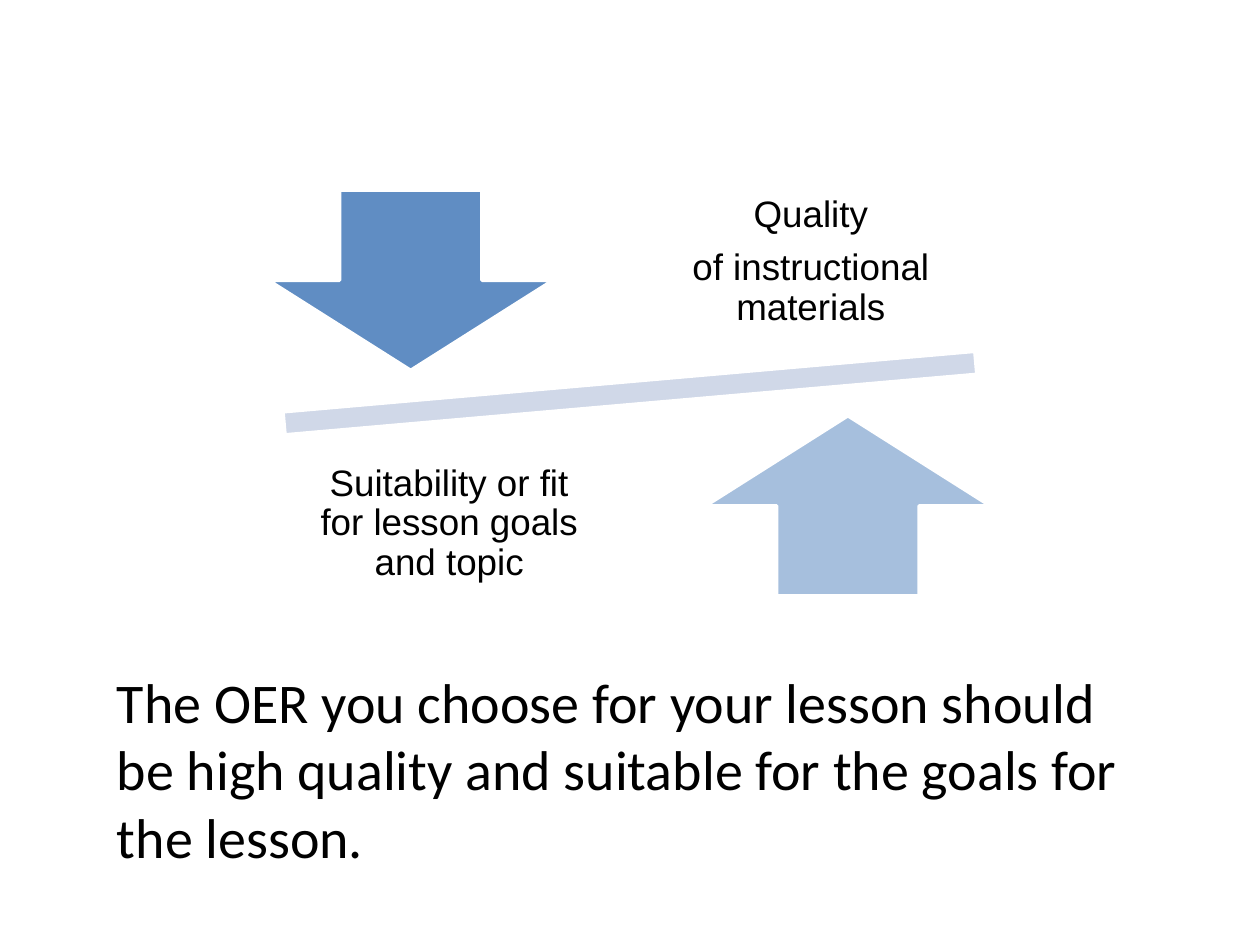
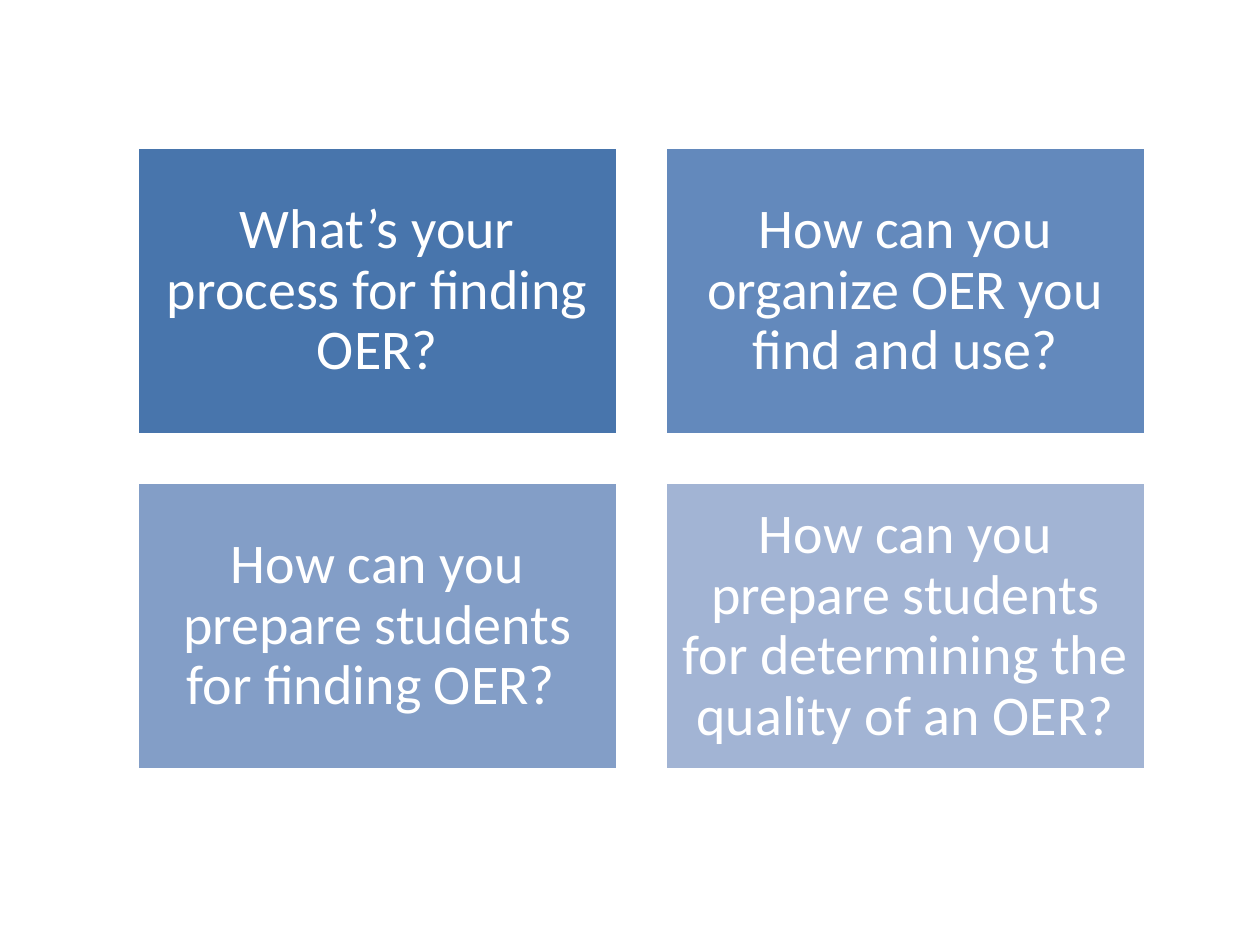
"""Build two slides on choosing, finding and organizing OER."""
from dataclasses import dataclass

from lxml import etree
from pptx import Presentation
from pptx.dml.color import RGBColor
from pptx.enum import shapes, text
from pptx.oxml import ns
from pptx.util import Inches, Pt


@dataclass(frozen=True)
class Theme:
    ink: str = "000000"
    paper: str = "FFFFFF"
    accent: str = "4F81BD"
    beam: str = "D0D8E8"
    cards: tuple = ("4875AC", "6389BC", "839EC7", "A2B4D4")
    body_font: str = "Calibri"
    label_font: str = "Arial"
    body_size: int = 32
    label_size: int = 21
    outline: int = 2
    tight_lines: float = 0.9
    paragraph_gap: float = 0.35


def write_text(frame, content, *, font, size, color, centered=False, inset=None,
               line_spacing=None, gap=0):
    frame.word_wrap = True
    if inset is not None:
        frame.margin_left = frame.margin_right = Inches(inset)
        frame.margin_top = frame.margin_bottom = Inches(inset)
    frame.vertical_anchor = text.MSO_ANCHOR.MIDDLE if centered else text.MSO_ANCHOR.TOP
    frame.text = content
    for paragraph in frame.paragraphs:
        paragraph.alignment = text.PP_ALIGN.CENTER if centered else text.PP_ALIGN.LEFT
        paragraph.line_spacing = line_spacing
        paragraph.space_after = Pt(size * gap)
        for run in paragraph.runs:
            run.font.name = font
            run.font.size = Pt(size)
            run.font.color.rgb = RGBColor.from_string(color)


class SlideBuilder:
    def __init__(self, presentation, theme):
        self.presentation = presentation
        self.theme = theme
        self.slide = None

    def new_slide(self):
        self.slide = self.presentation.slides.add_slide(self.presentation.slide_layouts[6])
        background = self.slide.background.fill
        background.solid()
        background.fore_color.rgb = RGBColor.from_string(self.theme.paper)

    def add_shape(self, kind, box, color, opacity=100, rotation=0):
        shape = self.slide.shapes.add_shape(kind, *map(Inches, box))
        shape.shadow.inherit = False
        shape.rotation = rotation
        shape.fill.solid()
        shape.fill.fore_color.rgb = RGBColor.from_string(color)
        shape.line.color.rgb = RGBColor.from_string(self.theme.paper)
        shape.line.width = Pt(self.theme.outline)
        if opacity < 100:
            fill_color = shape._element.spPr.find(ns.qn("a:solidFill"))[0]
            etree.SubElement(fill_color, ns.qn("a:alpha"), val=str(opacity * 1000))
        return shape

    def add_card(self, box, content, color):
        card = self.add_shape(shapes.MSO_SHAPE.RECTANGLE, box, color)
        write_text(card.text_frame, content, font=self.theme.body_font,
                   size=self.theme.body_size, color=self.theme.paper, centered=True,
                   inset=0.13, line_spacing=self.theme.tight_lines,
                   gap=self.theme.paragraph_gap)

    def add_label(self, box, content):
        label = self.slide.shapes.add_textbox(*map(Inches, box))
        write_text(label.text_frame, content, font=self.theme.label_font,
                   size=self.theme.label_size, color=self.theme.ink, centered=True,
                   inset=0.16, line_spacing=self.theme.tight_lines,
                   gap=self.theme.paragraph_gap)

    def add_statement(self, box, content):
        statement = self.slide.shapes.add_textbox(*map(Inches, box))
        write_text(statement.text_frame, content, font=self.theme.body_font,
                   size=self.theme.body_size, color=self.theme.ink)
        statement.text_frame.auto_size = text.MSO_AUTO_SIZE.SHAPE_TO_FIT_TEXT


def build_balance(builder):
    accent = builder.theme.accent
    arrow_size, label_size = (2.26, 1.43), (2.41, 1.5)
    builder.new_slide()
    builder.add_shape(shapes.MSO_SHAPE.MATH_MINUS, (1.25, 2.73, 7.5, 0.78),
                      builder.theme.beam, rotation=355)
    builder.add_shape(shapes.MSO_SHAPE.DOWN_ARROW, (2.13, 1.51, *arrow_size), accent, 90)
    builder.add_label((5.23, 1.33, *label_size), "Quality\nof instructional materials")
    builder.add_shape(shapes.MSO_SHAPE.UP_ARROW, (5.6, 3.3, *arrow_size), accent, 50)
    builder.add_label((2.36, 3.41, *label_size),
                      "Suitability or fit for lesson goals and topic")
    builder.add_statement((0.83, 5.25, 8.33, 1.72),
                          "The OER you choose for your lesson should be high quality "
                          "and suitable for the goals for the lesson.")


def build_questions(builder):
    questions = (
        "What’s your process for finding OER?",
        "How can you organize OER you find and use?",
        "How can you prepare students for finding OER? ",
        "How can you prepare students for determining the quality of an OER?",
    )
    left, top, width, height, gap = 1.09, 1.17, 3.81, 2.28, 0.38
    builder.new_slide()
    for index, (question, color) in enumerate(zip(questions, builder.theme.cards)):
        row, column = divmod(index, 2)
        box = (left + column * (width + gap), top + row * (height + gap), width, height)
        builder.add_card(box, question, color)


def main():
    presentation = Presentation()
    presentation.slide_width, presentation.slide_height = Inches(10), Inches(7.5)
    builder = SlideBuilder(presentation, Theme())
    build_balance(builder)
    build_questions(builder)
    presentation.save("out.pptx")


if __name__ == "__main__":
    main()
